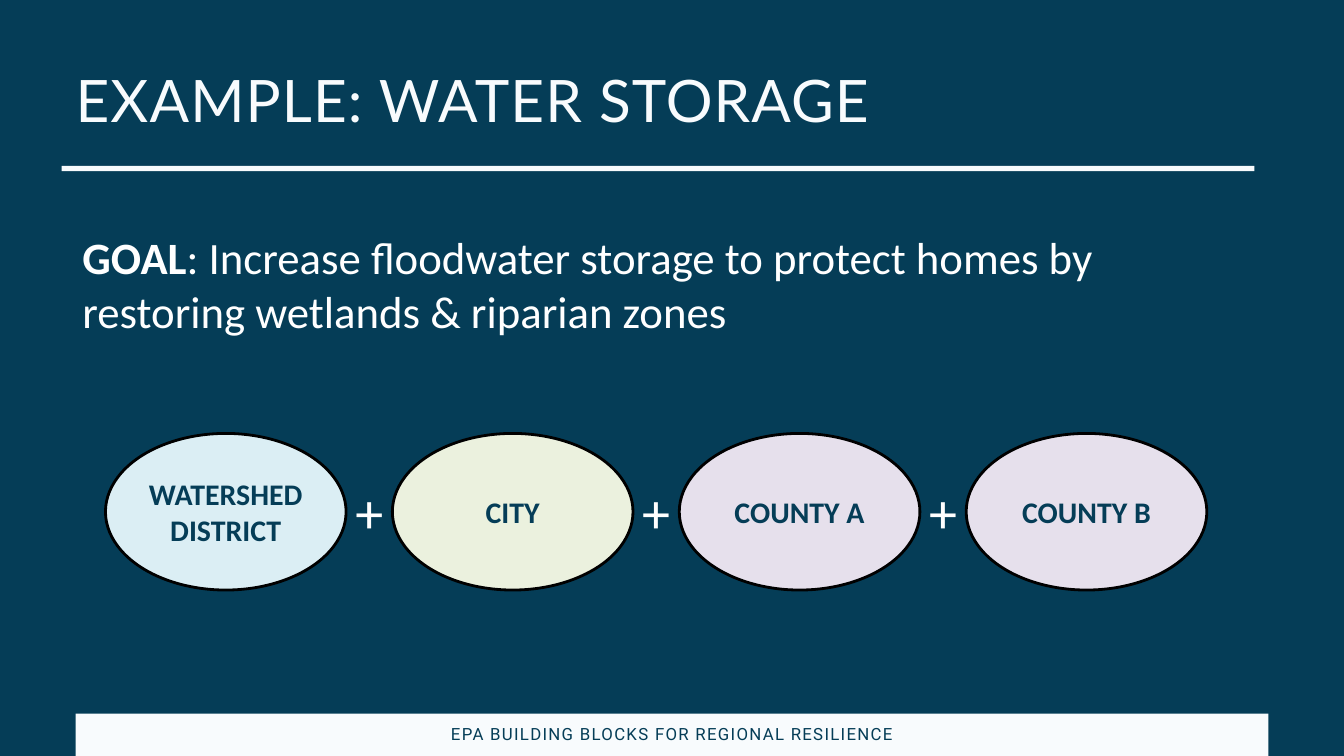
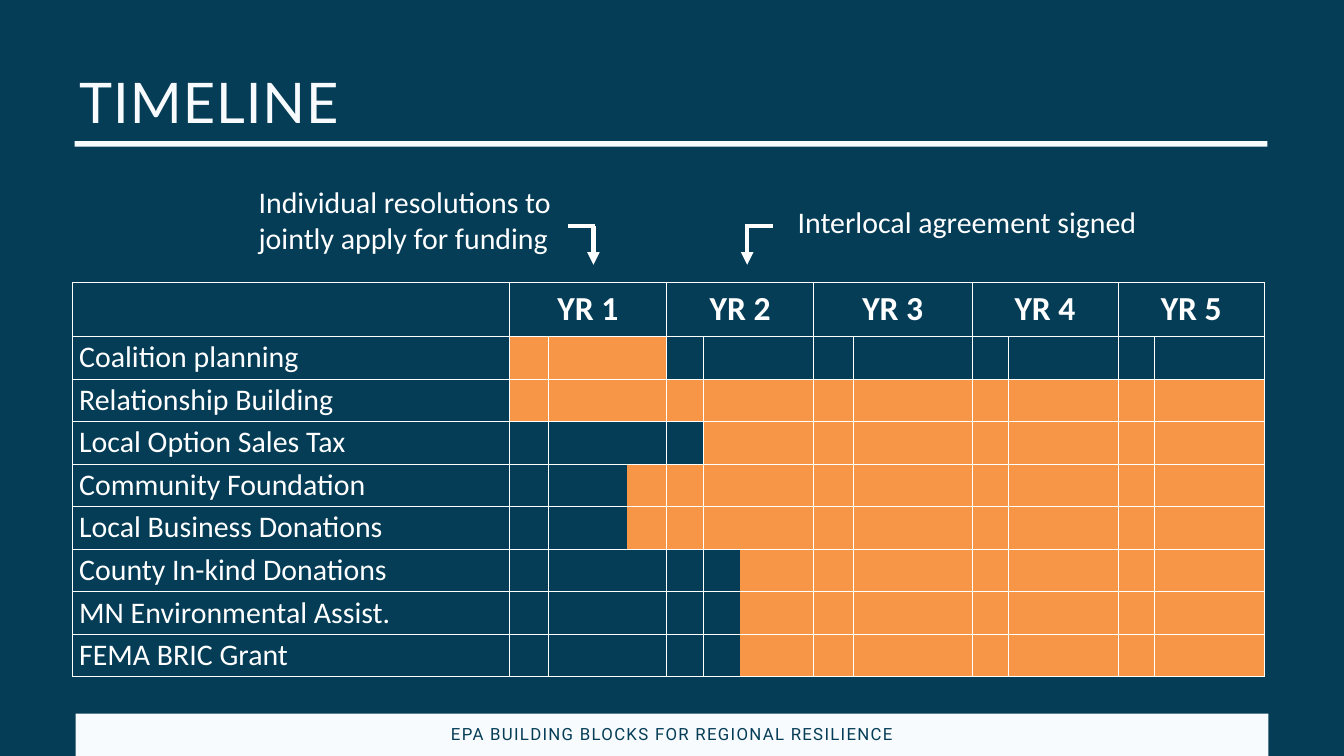
import pptx
import pptx.dml.color
import pptx.enum.shapes
import pptx.enum.text
import pptx.oxml.ns
import pptx.util
import lxml.etree

Pt = pptx.util.Pt
ALIGN = pptx.enum.text.PP_ALIGN
ANCHOR = pptx.enum.text.MSO_ANCHOR
SHAPE = pptx.enum.shapes.MSO_SHAPE

NAVY, PALE, WHITE, BLACK, ORANGE = "053D57", "F8FBFD", "FFFFFF", "000000", "F79646"
FOOTER = "EPA BUILDING BLOCKS FOR REGIONAL RESILIENCE"
NO_STYLE = "{2D5ABB26-0587-4C30-8999-92F81FD0307C}"

GOAL = [("GOAL", True),
        (": Increase floodwater storage to protect homes by restoring wetlands & riparian zones", False)]
PARTNERS = [("WATERSHED DISTRICT", "DBEEF4"), ("CITY", "EBF1DE"),
            ("COUNTY A", "E6E0EC"), ("COUNTY B", "E6E0EC")]

QUARTERS = 4
YEARS = [("YR 1", 42.2), ("YR 2", 39.4), ("YR 3", 42.4), ("YR 4", 39.2), ("YR 5", 39.2)]
TASKS = [("Coalition planning", 0, 4), ("Relationship Building", 0, 20),
         ("Local Option Sales Tax", 5, 20), ("Community Foundation", 3, 20),
         ("Local Business Donations", 3, 20), ("County In-kind Donations", 6, 20),
         ("MN Environmental Assist.", 6, 20), ("FEMA BRIC Grant", 6, 20)]
CALLOUTS = [(["Individual resolutions to", "jointly apply for funding"], (270, 193, 477, 85)),
            (["Interlocal agreement signed"], (847.5, 214.5, 462, 46))]
ARROWS = [(635.8, -1), (800.6, 1)]


def colour(value):
    return pptx.dml.color.RGBColor.from_string(value)


def place(shape, bounds):
    shape.left, shape.top, shape.width, shape.height = map(Pt, bounds)


def write(frame, paragraphs, size, ink, font="Calibri", align=ALIGN.LEFT,
          anchor=ANCHOR.TOP, inset=None, leading=None, tracking=None):
    frame.word_wrap = True
    frame.auto_size = pptx.enum.text.MSO_AUTO_SIZE.NONE
    frame.vertical_anchor = anchor
    if inset is not None:
        frame.margin_left = frame.margin_right = Pt(inset)
        frame.margin_top = frame.margin_bottom = Pt(inset)
    for index, runs in enumerate(paragraphs):
        para = frame.add_paragraph() if index else frame.paragraphs[0]
        para.alignment = align
        para.space_before = Pt(0)
        if leading:
            para.line_spacing = Pt(leading)
        for text, bold in runs:
            span = para.add_run()
            span.text = text
            span.font.name, span.font.size, span.font.bold = font, Pt(size), bold
            span.font.color.rgb = colour(ink)
            if tracking:
                span.font._element.set("spc", str(round(tracking * 100)))


def add_text(page, bounds, lines, size, ink, **style):
    box = page.shapes.add_textbox(*map(Pt, bounds))
    write(box.text_frame, [[(line, False)] for line in lines], size, ink, **style)


def add_block(page, kind, bounds, fill, line=None):
    shape = page.shapes.add_shape(kind, *map(Pt, bounds))
    shape.shadow.inherit = False
    shape.fill.solid()
    shape.fill.fore_color.rgb = colour(fill)
    if line:
        shape.line.color.rgb = colour(line)
        shape.line.width = Pt(3)
    else:
        shape.line.fill.background()
    return shape


def add_page(deck, layout, title, bounds, size, leading, tracking, rule):
    page = deck.slides.add_slide(deck.slide_layouts[layout])
    place(page.shapes.title, bounds)
    write(page.shapes.title.text_frame, [[(title, False)]], size, PALE, font="Lato",
          inset=0, leading=leading, tracking=tracking)
    add_block(page, SHAPE.RECTANGLE, (*rule, 1278, 5.8), PALE)
    add_block(page, SHAPE.RECTANGLE, (81, 764.6, 1278, 45.4), PALE)
    add_text(page, (434, 772, 572, 24.5), [FOOTER], 18, NAVY, font="Roboto",
             align=ALIGN.CENTER, inset=0, leading=25.2, tracking=1.4)
    return page


def add_line(page, start, end, arrow=False):
    line = page.shapes.add_connector(pptx.enum.shapes.MSO_CONNECTOR.STRAIGHT,
                                     *map(Pt, start + end))
    line.line.color.rgb = colour(WHITE)
    line.line.width = Pt(4.5)
    if arrow:
        lxml.etree.SubElement(line.line._get_or_add_ln(), pptx.oxml.ns.qn("a:tailEnd"),
                              type="triangle")
    lxml.etree.SubElement(line._element.spPr, pptx.oxml.ns.qn("a:effectLst"))


def format_cell(cell, sides, fill=None):
    properties = cell._tc.get_or_add_tcPr()
    for side in sides:
        edge = lxml.etree.SubElement(properties, pptx.oxml.ns.qn("a:ln" + side),
                                     w=str(Pt(1)))
        paint = lxml.etree.SubElement(edge, pptx.oxml.ns.qn("a:solidFill"))
        lxml.etree.SubElement(paint, pptx.oxml.ns.qn("a:srgbClr"), val=WHITE)
    if fill:
        cell.fill.solid()
        cell.fill.fore_color.rgb = colour(fill)
    else:
        cell.fill.background()
    cell.margin_top = cell.margin_bottom = 0


def write_cell(cell, text, size, bold, align):
    cell.vertical_anchor = ANCHOR.MIDDLE
    para = cell.text_frame.paragraphs[0]
    para.alignment = align
    span = para.add_run()
    span.text = text
    span.font.name, span.font.size, span.font.bold = "Calibri", Pt(size), bold
    span.font.color.rgb = colour(WHITE)


def add_schedule(page):
    widths = [468] + [width for _, width in YEARS for _ in range(QUARTERS)]
    heights = [57.6] + [45.6] * len(TASKS)
    frame = page.shapes.add_table(len(heights), len(widths), Pt(77.6), Pt(302.8),
                                  Pt(sum(widths)), Pt(sum(heights)))
    table = frame.table
    table.first_row = table.horz_banding = False
    table._tbl.tblPr.find(pptx.oxml.ns.qn("a:tableStyleId")).text = NO_STYLE
    for column, width in zip(table.columns, widths):
        column.width = Pt(width)
    for row, height in zip(table.rows, heights):
        row.height = Pt(height)

    format_cell(table.cell(0, 0), "LRTB")
    for index, (year, _) in enumerate(YEARS):
        first = 1 + index * QUARTERS
        for column in range(first, first + QUARTERS):
            format_cell(table.cell(0, column), "LRTB")
        table.cell(0, first).merge(table.cell(0, first + QUARTERS - 1))
        write_cell(table.cell(0, first), year, 36, True, ALIGN.CENTER)

    for row, (task, start, end) in enumerate(TASKS, 1):
        format_cell(table.cell(row, 0), "LRTB")
        write_cell(table.cell(row, 0), task, 32, False, ALIGN.LEFT)
        for quarter in range(len(YEARS) * QUARTERS):
            left = "L" if quarter % QUARTERS == 0 else ""
            right = "R" if quarter % QUARTERS == QUARTERS - 1 else ""
            format_cell(table.cell(row, quarter + 1), left + right + "TB",
                        ORANGE if start <= quarter < end else None)


def build_storage(deck):
    page = add_page(deck, 1, "EXAMPLE: WATER STORAGE", (81, 69, 1215, 75.6),
                    62.7, 75.2, 1.2, (66, 177.6))
    body = page.placeholders[1]
    place(body, (81, 242.6, 1131, 415))
    write(body.text_frame, [GOAL], 48, WHITE)
    properties = body.text_frame.paragraphs[0]._p.get_or_add_pPr()
    properties.set("marL", "0")
    properties.set("indent", "0")
    lxml.etree.SubElement(properties, pptx.oxml.ns.qn("a:buNone"))

    left, width, pitch = 113, 257.8, 307.4
    for index, (name, fill) in enumerate(PARTNERS):
        x = left + index * pitch
        oval = add_block(page, SHAPE.OVAL, (x, 464.4, width, 167.8), fill, BLACK)
        write(oval.text_frame, [[(name, True)]], 32, NAVY, align=ALIGN.CENTER,
              anchor=ANCHOR.MIDDLE)
        if index:
            gap = pitch - width
            add_text(page, (x - gap, 508.3, gap, 80), ["+"], 60, WHITE, align=ALIGN.CENTER)


def build_timeline(deck):
    page = add_page(deck, 5, "TIMELINE", (84.7, 70.6, 1275, 70), 60, 73.4, 1.1, (80, 151.2))
    add_schedule(page)
    for lines, bounds in CALLOUTS:
        add_text(page, bounds, lines, 32, WHITE)
    top, tip = 242, 283.7
    for x, side in ARROWS:
        add_line(page, (x, top), (x, tip), arrow=True)
        add_line(page, (x + side * 27.4, top), (x - side * 2.2, top))


def main():
    deck = pptx.Presentation()
    deck.slide_width, deck.slide_height = Pt(1440), Pt(810)
    backdrop = deck.slide_master.background.fill
    backdrop.solid()
    backdrop.fore_color.rgb = colour(NAVY)
    build_storage(deck)
    build_timeline(deck)
    deck.save("out.pptx")


if __name__ == "__main__":
    main()
